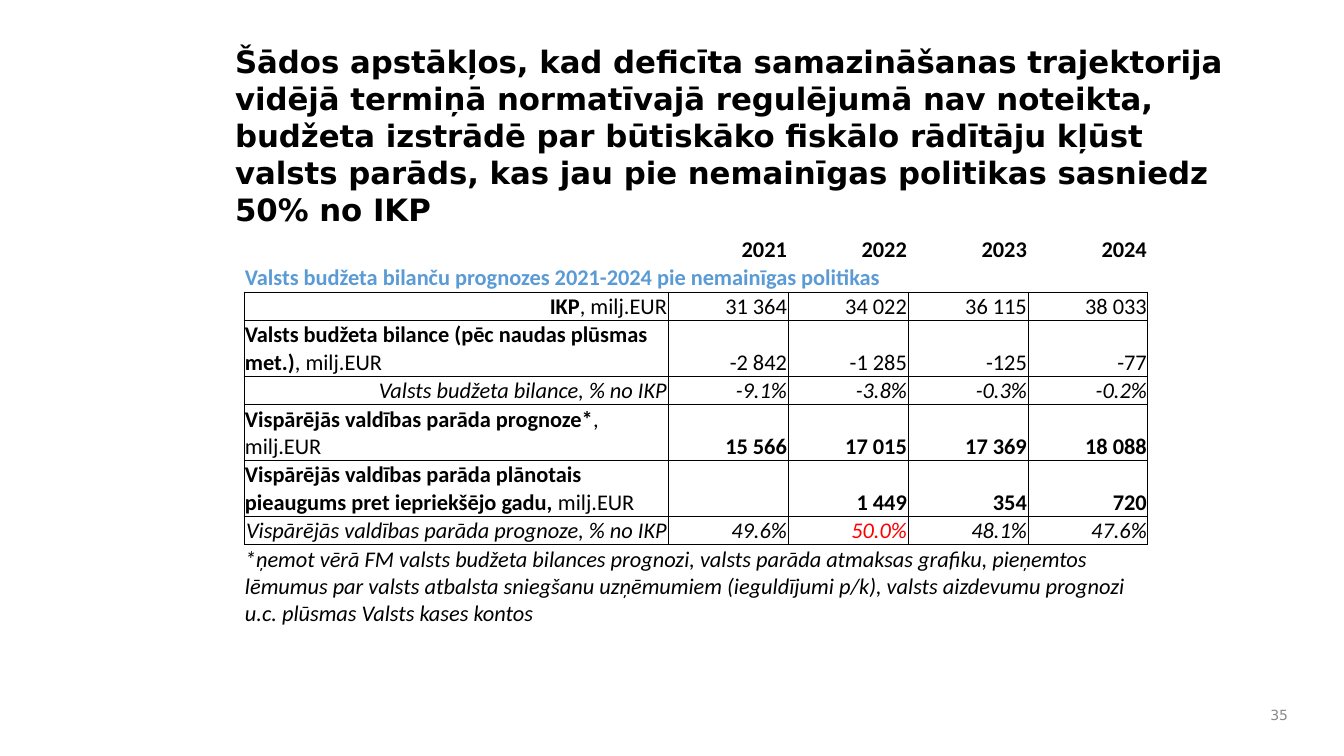
from lxml import etree
from pptx import Presentation, util as u
from pptx.dml.color import RGBColor
from pptx.enum import text as t
from pptx.oxml import ns

BLACK = RGBColor(0x00, 0x00, 0x00)
BLUE = RGBColor(0x5B, 0x9B, 0xD5)
RED = RGBColor(0xFF, 0x00, 0x00)
GREY = RGBColor(0x89, 0x89, 0x89)

PX_PER_INCH = 100.8
LEFT, RIGHT = t.PP_ALIGN.LEFT, t.PP_ALIGN.RIGHT
BOTTOM, MIDDLE, TOP = t.MSO_ANCHOR.BOTTOM, t.MSO_ANCHOR.MIDDLE, t.MSO_ANCHOR.TOP
NO_GRID_STYLE = "{2D5ABB26-0587-4C30-8999-92F81FD0307C}"

TITLE = ("Šādos apstākļos, kad deficīta samazināšanas trajektorija vidējā termiņā "
         "normatīvajā regulējumā nav noteikta, budžeta izstrādē par būtiskāko fiskālo "
         "rādītāju kļūst valsts parāds, kas jau pie nemainīgas politikas sasniedz 50% no IKP")
FOOTNOTE = ("*ņemot vērā FM valsts budžeta bilances prognozi, valsts parāda atmaksas "
            "grafiku, pieņemtos lēmumus par valsts atbalsta sniegšanu uzņēmumiem "
            "(ieguldījumi p/k), valsts aizdevumu prognozi u.c. plūsmas Valsts kases kontos")

PLAIN, BOLD, ITALIC = {}, {"bold": True}, {"italic": True}
COLUMN_WIDTHS = [205, 219] + [120] * 4
FIRST_VALUE = 2
GRID_ROWS = range(2, 8)

# Each row: height, label span, label alignment, label spans, values, value style
ROWS = [
    (28, 1, LEFT, [], ["2021", "2022", "2023", "2024"], BOLD),
    (28, 4, LEFT, [("Valsts budžeta bilanču prognozes 2021-2024 pie nemainīgas politikas",
                    {"bold": True, "color": BLUE})], [], PLAIN),
    (28, 2, RIGHT, [("IKP", BOLD), (", milj.EUR", PLAIN)],
     ["31 364", "34 022", "36 115", "38 033"], PLAIN),
    (55, 2, LEFT, [("Valsts budžeta bilance (pēc naudas plūsmas met.)", BOLD),
                   (", milj.EUR", PLAIN)],
     ["-2 842", "-1 285", "-125", "-77"], PLAIN),
    (28, 2, RIGHT, [("Valsts budžeta bilance, % no IKP", ITALIC)],
     ["-9.1%", "-3.8%", "-0.3%", "-0.2%"], ITALIC),
    (56, 2, LEFT, [("Vispārējās valdības parāda prognoze*", BOLD), (", milj.EUR", PLAIN)],
     ["15 566", "17 015", "17 369", "18 088"], BOLD),
    (55, 2, LEFT, [("Vispārējās valdības parāda plānotais pieaugums pret iepriekšējo gadu,",
                    BOLD), (" milj.EUR", PLAIN)],
     ["", "1 449", "354", "720"], BOLD),
    (28, 2, RIGHT, [("Vispārējās valdības parāda prognoze, % no IKP", ITALIC)],
     ["49.6%", "50.0%", "48.1%", "47.6%"], ITALIC),
    (83, 6, LEFT, [(FOOTNOTE, ITALIC)], [], PLAIN),
]
HIGHLIGHTED = "50.0%"


def px(length):
    return u.Emu(round(length * u.Inches(1) / PX_PER_INCH))


def set_attributes(target, values):
    for name, value in values.items():
        setattr(target, name, value)


def write(para, spans, name, size, align=LEFT):
    para.alignment = align
    for words, style in spans:
        span = para.add_run()
        span.text = words
        values = {"name": name, "size": u.Pt(size), "bold": False, "italic": False} | style
        span.font.color.rgb = values.pop("color", BLACK)
        set_attributes(span.font, values)


def add_title(page, left, top, width, height):
    title = page.shapes.title
    set_attributes(title, {"left": px(left), "top": px(top),
                           "width": px(width), "height": px(height)})
    set_attributes(title.text_frame, {"word_wrap": True, "vertical_anchor": TOP,
                                      "auto_size": t.MSO_AUTO_SIZE.NONE})
    para = title.text_frame.paragraphs[0]
    write(para, [(TITLE, BOLD)], "DejaVu Sans", 22)


def add_page_number(page, left, top, width, height):
    box = page.shapes.add_textbox(px(left), px(top), px(width), px(height))
    set_attributes(box.text_frame, {"word_wrap": True, "vertical_anchor": MIDDLE})
    write(box.text_frame.paragraphs[0], [("35", {"color": GREY})], "DejaVu Sans", 10, RIGHT)


def draw_borders(cell):
    properties = cell._tc.get_or_add_tcPr()
    for side in ("a:lnL", "a:lnR", "a:lnT", "a:lnB"):
        line = etree.SubElement(properties, ns.qn(side), w=str(u.Pt(0.5)))
        fill = etree.SubElement(line, ns.qn("a:solidFill"))
        etree.SubElement(fill, ns.qn("a:srgbClr"), val=str(BLACK))


def format_cell(cell, bordered):
    set_attributes(cell, {"margin_left": px(1), "margin_right": px(1), "margin_top": px(1),
                          "margin_bottom": 0, "vertical_anchor": BOTTOM})
    if bordered:
        draw_borders(cell)
    cell.fill.background()
    # Empty cells keep the text size so that they do not stretch their row
    para = cell.text_frame.paragraphs[0]
    if not para.runs:
        etree.SubElement(para._p, ns.qn("a:endParaRPr"), sz="1600")


def add_forecast_table(page, left, top):
    heights = [row[0] for row in ROWS]
    frame = page.shapes.add_table(len(ROWS), len(COLUMN_WIDTHS), px(left), px(top),
                                  px(sum(COLUMN_WIDTHS)), px(sum(heights)))
    table = frame.table
    set_attributes(table, {"first_row": False, "horz_banding": False})
    table._tbl.tblPr.find(ns.qn("a:tableStyleId")).text = NO_GRID_STYLE
    for column, width in zip(table.columns, COLUMN_WIDTHS):
        column.width = px(width)

    for i, (height, reach, align, label, values, style) in enumerate(ROWS):
        table.rows[i].height = px(height)
        write(table.cell(i, 0).text_frame.paragraphs[0], label, "Calibri", 16, align)
        for j, value in enumerate(values, FIRST_VALUE):
            if value:
                look = style | ({"color": RED} if value == HIGHLIGHTED else {})
                write(table.cell(i, j).text_frame.paragraphs[0], [(value, look)],
                      "Calibri", 16, RIGHT)
        for j in range(len(COLUMN_WIDTHS)):
            format_cell(table.cell(i, j), i in GRID_ROWS)
        if reach > 1:
            table.cell(i, 0).merge(table.cell(i, reach - 1))


def main():
    deck = Presentation()
    set_attributes(deck, {"slide_width": px(1344), "slide_height": px(756)})
    page = deck.slides.add_slide(deck.slide_layouts[5])
    add_title(page, 225, 38, 1012, 208)
    add_forecast_table(page, 244, 235)
    add_page_number(page, 1237, 698, 61, 33)
    deck.save("out.pptx")


if __name__ == "__main__":
    main()
